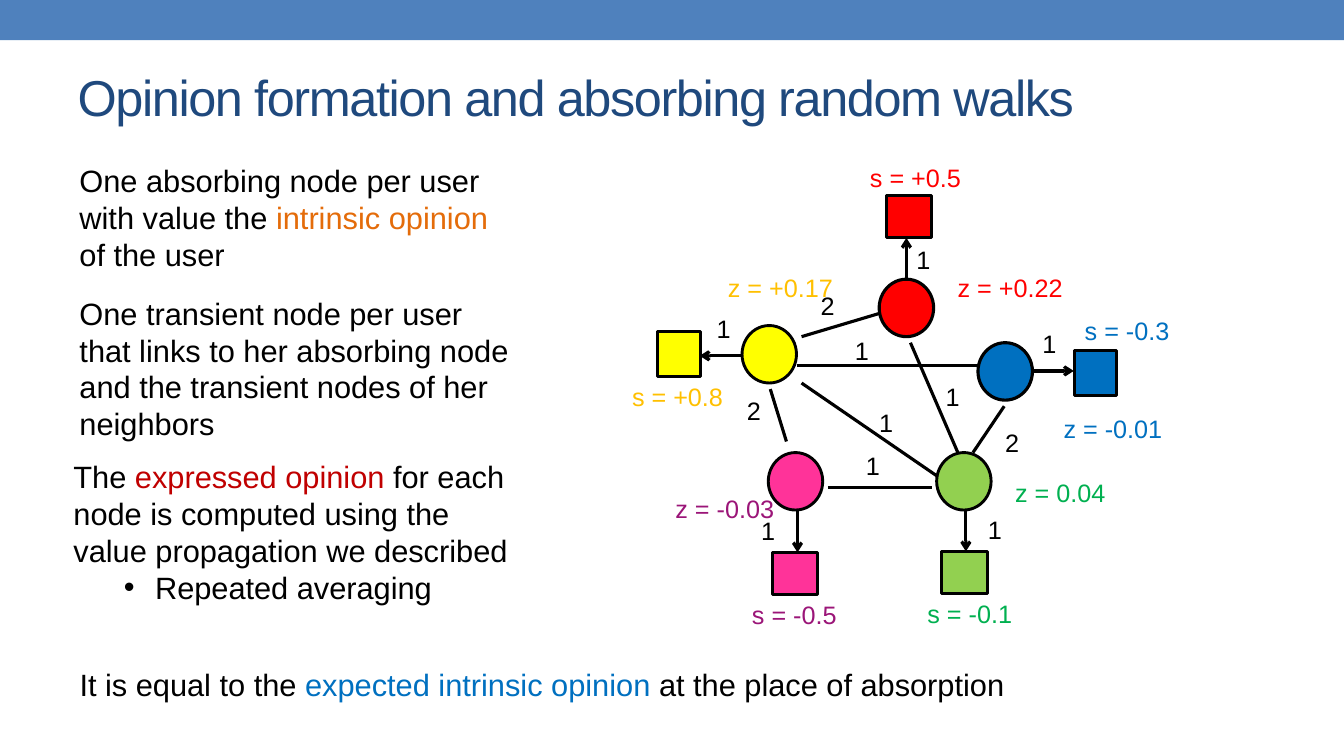
from dataclasses import dataclass

from lxml import etree
from pptx import Presentation
from pptx.dml.color import RGBColor
from pptx.enum.shapes import MSO_CONNECTOR, MSO_SHAPE
from pptx.enum.text import MSO_ANCHOR, MSO_AUTO_SIZE, PP_ALIGN
from pptx.oxml.ns import qn
from pptx.util import Inches, Pt

STRAIGHT = MSO_CONNECTOR.STRAIGHT
RECTANGLE, OVAL = MSO_SHAPE.RECTANGLE, MSO_SHAPE.OVAL
MIDDLE, TOP = MSO_ANCHOR.MIDDLE, MSO_ANCHOR.TOP
LEFT = PP_ALIGN.LEFT
NO_AUTOFIT, FIT_SHAPE = MSO_AUTO_SIZE.NONE, MSO_AUTO_SIZE.SHAPE_TO_FIT_TEXT

BLACK = RGBColor(0x00, 0x00, 0x00)
BAR_BLUE = RGBColor(0x4F, 0x81, 0xBD)
TITLE_BLUE = RGBColor(0x1F, 0x49, 0x7D)
ORANGE = RGBColor(0xE4, 0x6C, 0x0A)
DARK_RED = RGBColor(0xC0, 0x00, 0x00)
RED = RGBColor(0xFF, 0x00, 0x00)
BLUE = RGBColor(0x00, 0x70, 0xC0)
LIGHT_GREEN = RGBColor(0x92, 0xD0, 0x50)
GREEN = RGBColor(0x00, 0xB0, 0x50)
PINK = RGBColor(0xFF, 0x33, 0x99)
PURPLE = RGBColor(0x9B, 0x15, 0x78)
YELLOW = RGBColor(0xFF, 0xFF, 0x00)
GOLD = RGBColor(0xFF, 0xC0, 0x00)

FONT = "Arial"
BODY_SIZE, LABEL_SIZE = 22, 18
NODE_SIZE = (0.54, 0.57)
SQUARE_SIZE = (0.45, 0.42)
ARROW_LENGTH = 0.41
LABEL_HEIGHT = 0.4
LINE_WIDTH, THIN_WIDTH = 2.25, 2.08


@dataclass
class User:
    fill: RGBColor
    text_color: RGBColor
    outline: float
    node: tuple
    square: tuple
    rotation: int
    arrow_start: tuple
    direction: tuple
    weight: tuple
    intrinsic: tuple
    expressed: tuple


USERS = [
    User(RED, RED, LINE_WIDTH, (2.72, 1.27), (2.79, 0.44), 0, (2.99, 1.27), (0, -1), (2.99, 0.87),
         ("s = +0.5", 2.53, 0.06, 1.11), ("z = +0.22", 3.4, 1.15, 1.25)),
    User(BLUE, BLUE, LINE_WIDTH, (3.7, 1.9), (4.64, 1.99), 90, (4.24, 2.18), (1, 0), (4.24, 1.71),
         ("s = -0.3", 4.66, 1.58, 1.05), ("z = -0.01", 4.45, 2.55, 1.19)),
    User(LIGHT_GREEN, GREEN, THIN_WIDTH, (3.29, 2.99), (3.34, 3.97), 180, (3.58, 3.56), (0, 1), (3.7, 3.55),
         ("s = -0.1", 3.1, 4.39, 1.05), ("z = 0.04", 3.97, 3.19, 1.11)),
    User(PINK, PURPLE, THIN_WIDTH, (1.62, 2.99), (1.66, 3.98), 180, (1.91, 3.57), (0, 1), (1.45, 3.56),
         ("s = -0.5", 1.36, 4.4, 1.05), ("z = -0.03", 0.6, 3.34, 1.19)),
    User(YELLOW, GOLD, THIN_WIDTH, (1.36, 1.73), (0.51, 1.8), 270, (1.35, 2.03), (-1, 0), (1.01, 1.56),
         ("s = +0.8", 0.17, 2.23, 1.11), ("z = +0.17", 1.12, 1.15, 1.25)),
]

EDGES = [
    ((2.21, 3.34), (3.24, 3.34), "1", (2.49, 2.92)),
    ((1.8, 2.88), (1.64, 2.36), "2", (1.31, 2.37)),
    ((1.95, 1.84), (2.72, 1.61), "2", (2.04, 1.33)),
    ((1.9, 2.13), (3.7, 2.13), "1", (2.38, 1.78)),
    ((3.5, 2.99), (3.03, 1.9), "1", (3.28, 2.23)),
    ((3.65, 2.99), (3.96, 2.53), "2", (3.87, 2.69)),
    ((3.29, 3.22), (1.95, 2.3), "1", (2.62, 2.49)),
]

BODY_TEXTS = [
    ((0.06, 2.93, 4.52, 1.95), True,
     [("The ", BLACK), ("expressed opinion ", DARK_RED),
      ("for each node is computed using the value propagation we described", BLACK)],
     "Repeated averaging"),
    ((0.12, 0, 4.26, 1.21), True,
     [("One absorbing node per user with value the", BLACK),
      (" intrinsic opinion ", ORANGE), ("of the user", BLACK)], None),
    ((0.12, 1.31, 4.47, 1.58), True,
     [("One transient node per user that links to her absorbing node "
       "and the transient nodes of her neighbors", BLACK)], None),
    ((0.12, 5, 9.49, 0.47), False,
     [("It is equal to the ", BLACK), ("expected intrinsic opinion ", BLUE),
      ("at the place of absorption", BLACK)], None),
]


def add_run(paragraph, text, size, color):
    run = paragraph.add_run()
    run.text = text
    run.font.name = FONT
    run.font.size = Pt(size)
    run.font.color.rgb = color
    return run


def add_text(slide, box, runs, size, wrap):
    frame = slide.shapes.add_textbox(*map(Inches, box)).text_frame
    frame.word_wrap = wrap
    frame.auto_size = FIT_SHAPE
    frame.vertical_anchor = TOP
    paragraph = frame.paragraphs[0]
    paragraph.alignment = LEFT
    for text, color in runs:
        add_run(paragraph, text, size, color)
    return frame


def add_bullet(frame, text):
    paragraph = frame.add_paragraph()
    paragraph.level = 1
    properties = paragraph._p.get_or_add_pPr()
    properties.set("marL", str(Inches(0.81)))
    properties.set("indent", str(Inches(-0.31)))
    etree.SubElement(properties, qn("a:buFont"), typeface=FONT)
    etree.SubElement(properties, qn("a:buChar"), char="•")
    add_run(paragraph, text, BODY_SIZE, BLACK)


def add_line(slide, start, end, arrow=False, width=LINE_WIDTH):
    line = slide.shapes.add_connector(STRAIGHT, *map(Inches, start + end))
    line.line.color.rgb = BLACK
    line.line.width = Pt(width)
    if arrow:
        etree.SubElement(line.line._get_or_add_ln(), qn("a:tailEnd"), type="arrow")
    etree.SubElement(line._element.spPr, qn("a:effectLst"))


def add_filled_shape(slide, kind, box, fill, outline=None):
    shape = slide.shapes.add_shape(kind, *map(Inches, box))
    shape.shadow.inherit = False
    shape.fill.solid()
    shape.fill.fore_color.rgb = fill
    if outline is None:
        shape.line.fill.background()
    else:
        shape.line.color.rgb = BLACK
        shape.line.width = Pt(outline)
    return shape


def add_title(slide, box, text):
    title = slide.shapes.title
    title.left, title.top, title.width, title.height = map(Inches, box)
    frame = title.text_frame
    frame.word_wrap = True
    frame.auto_size = NO_AUTOFIT
    frame.vertical_anchor = MIDDLE
    paragraph = frame.paragraphs[0]
    paragraph.alignment = LEFT
    run = add_run(paragraph, text, 36, TITLE_BLUE)
    run._r.get_or_add_rPr().set("spc", "-100")


def add_body(slide, left, top):
    for (x, y, width, height), wrap, runs, bullet in BODY_TEXTS:
        frame = add_text(slide, (left + x, top + y, width, height), runs, BODY_SIZE, wrap)
        if bullet:
            add_bullet(frame, bullet)


def add_network(slide, left, top):
    def place(point):
        return left + point[0], top + point[1]

    def add_label(text, point, width=0.34, color=BLACK):
        add_text(slide, (*place(point), width, LABEL_HEIGHT), [(text, color)], LABEL_SIZE, False)

    for start, end, _, _ in EDGES:
        add_line(slide, place(start), place(end))
    for user in USERS:
        add_filled_shape(slide, OVAL, place(user.node) + NODE_SIZE, user.fill, user.outline)
    for _, _, weight, position in EDGES:
        add_label(weight, position)
    for user in USERS:
        start = place(user.arrow_start)
        end = tuple(s + ARROW_LENGTH * d for s, d in zip(start, user.direction))
        add_line(slide, start, end, arrow=True)
        square = add_filled_shape(slide, RECTANGLE, place(user.square) + SQUARE_SIZE, user.fill, THIN_WIDTH)
        square.rotation = user.rotation
        add_label("1", user.weight)
        for text, x, y, width in (user.intrinsic, user.expressed):
            add_label(text, (x, y), width, user.text_color)


def main():
    presentation = Presentation()
    presentation.slide_width = Inches(13.33)
    presentation.slide_height = Inches(7.5)
    slide = presentation.slides.add_slide(presentation.slide_layouts[5])
    add_filled_shape(slide, RECTANGLE, (0, 0, 13.33, 0.4), BAR_BLUE)
    add_title(slide, (0.67, 0.33, 11.02, 1.25), "Opinion formation and absorbing random walks")
    add_network(slide, 6, 1.5)
    add_body(slide, 0.57, 1.56)
    presentation.save("out.pptx")


if __name__ == "__main__":
    main()
